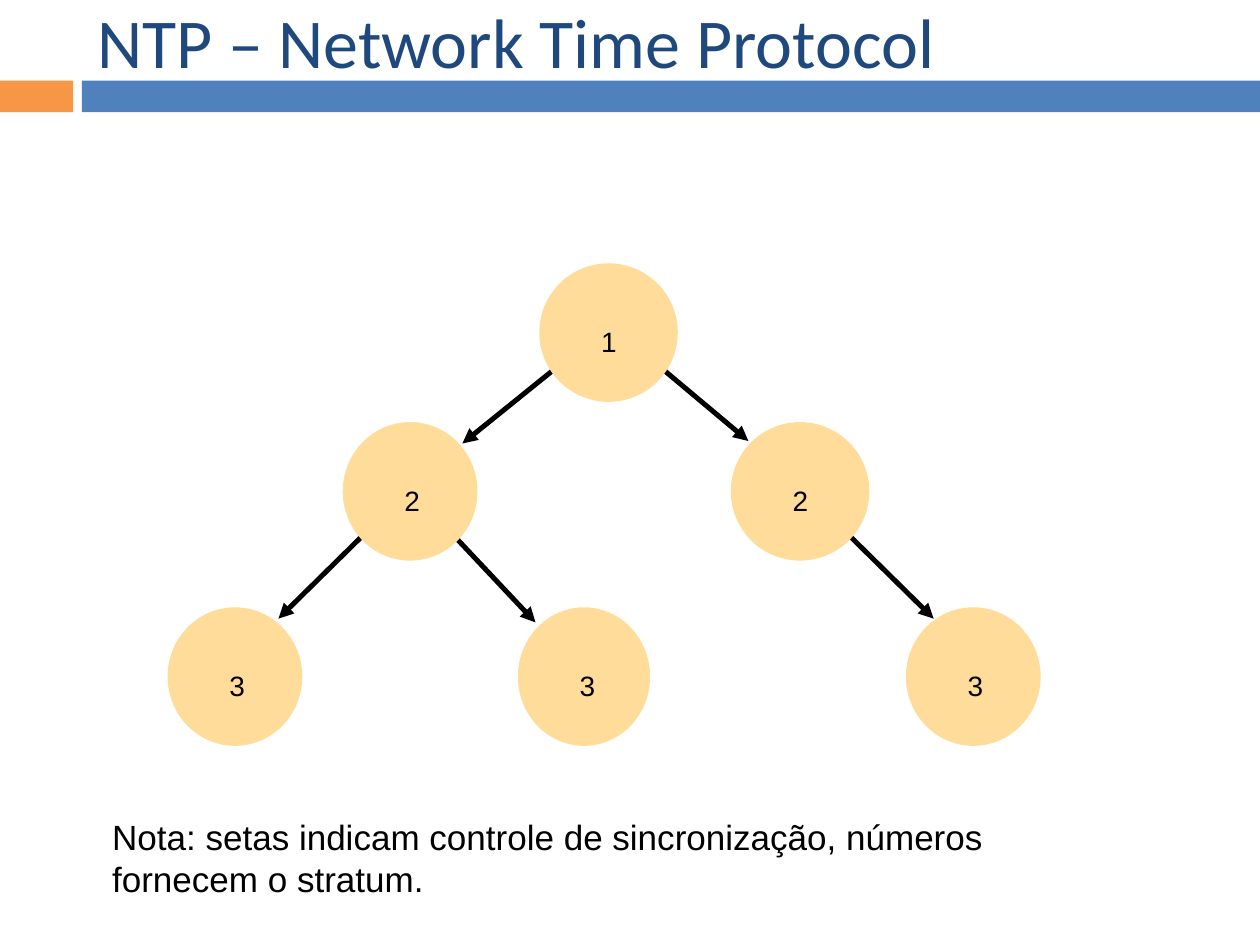
from lxml import etree
from pptx import Presentation
from pptx.dml.color import RGBColor
from pptx.enum import shapes, text
from pptx.oxml import ns
from pptx.util import Inches, Pt

COLORS = {
    "orange": "F79646",
    "blue": "4F81BD",
    "title": "1F497D",
    "node": "FFDC99",
    "ink": "000000",
}
STROKE = Pt(2.86)
LABEL_OFFSET = 0.47

NODES = [
    ("1", 4.3, 2.11, 1.06),
    ("2", 2.74, 3.37, 1.03),
    ("2", 5.82, 3.37, 1.06),
    ("3", 1.35, 4.84, 1.03),
    ("3", 4.13, 4.84, 1.01),
    ("3", 7.21, 4.84, 1.03),
]
NODE_HEIGHT = 1.06
ARROWS = [
    (2.89, 4.24, 2.21, 4.91),
    (3.62, 4.27, 4.25, 4.94),
    (4.4, 2.93, 3.67, 3.52),
    (5.26, 2.93, 5.94, 3.5),
    (6.73, 4.24, 7.41, 4.91),
]


def color(name):
    return RGBColor.from_string(COLORS[name])


def to_inches(box):
    return [Inches(length) for length in box]


def add_filled(page, kind, box, fill):
    shape = page.shapes.add_shape(kind, *to_inches(box))
    shape.shadow.inherit = False
    shape.fill.solid()
    shape.fill.fore_color.rgb = color(fill)
    shape.line.fill.background()
    return shape


def add_text(page, box, words, size, wrap):
    frame = page.shapes.add_textbox(*to_inches(box)).text_frame
    frame.margin_left = frame.margin_right = 0
    frame.margin_top = frame.margin_bottom = 0
    frame.word_wrap = wrap
    frame.auto_size = text.MSO_AUTO_SIZE.SHAPE_TO_FIT_TEXT
    para = frame.paragraphs[0]
    para.text = words
    para.font.name = "Arial"
    para.font.size = Pt(size)
    para.font.color.rgb = color("ink")


def add_title(page, box, words):
    title = page.shapes.title
    title.left, title.top, title.width, title.height = to_inches(box)
    frame = title.text_frame
    frame.vertical_anchor = text.MSO_ANCHOR.MIDDLE
    frame.auto_size = text.MSO_AUTO_SIZE.NONE
    para = frame.paragraphs[0]
    para.text = words
    para.alignment = text.PP_ALIGN.LEFT
    para.font.name = "Calibri"
    para.font.size = Pt(40)
    para.font.color.rgb = color("title")


def add_band(page, box):
    left, top, width, height = box
    accent, gap = 0.58, 0.07
    start = accent + gap
    rectangle = shapes.MSO_SHAPE.RECTANGLE
    add_filled(page, rectangle, (left, top, accent, height), "orange")
    add_filled(page, rectangle, (left + start, top, width - start, height), "blue")


def add_arrow(page, ends):
    arrow = page.shapes.add_connector(
        shapes.MSO_CONNECTOR.STRAIGHT, *to_inches(ends))
    arrow.line.width = STROKE
    arrow.line.color.rgb = color("ink")
    etree.SubElement(arrow.line._get_or_add_ln(), ns.qn("a:tailEnd"),
                     type="triangle", w="med", len="med")
    etree.SubElement(arrow._element.spPr, ns.qn("a:effectLst"))


def add_node(page, box, stratum):
    left, top = box[:2]
    circle = add_filled(page, shapes.MSO_SHAPE.OVAL, box, "node")
    circle.line.color.rgb = color("node")
    circle.line.width = STROKE
    label = (left + LABEL_OFFSET, top + LABEL_OFFSET, 0.12, 0.27)
    add_text(page, label, stratum, 16, False)


def add_tree(page):
    for ends in ARROWS:
        add_arrow(page, ends)
    for stratum, left, top, width in NODES:
        add_node(page, (left, top, width, NODE_HEIGHT), stratum)


def main():
    deck = Presentation()
    deck.slide_width, deck.slide_height = Inches(10), Inches(7.5)
    page = deck.slides.add_slide(deck.slide_layouts[5])
    add_band(page, (0, 0.64, 10, 0.25))
    add_title(page, (0.67, 0.06, 8.92, 0.53), "NTP – Network Time Protocol")
    add_tree(page)
    add_text(page, (0.89, 6.47, 8.15, 0.66),
             "Nota: setas indicam controle de sincronização, "
             "números fornecem o stratum.", 20, True)
    deck.save("out.pptx")


if __name__ == "__main__":
    main()
